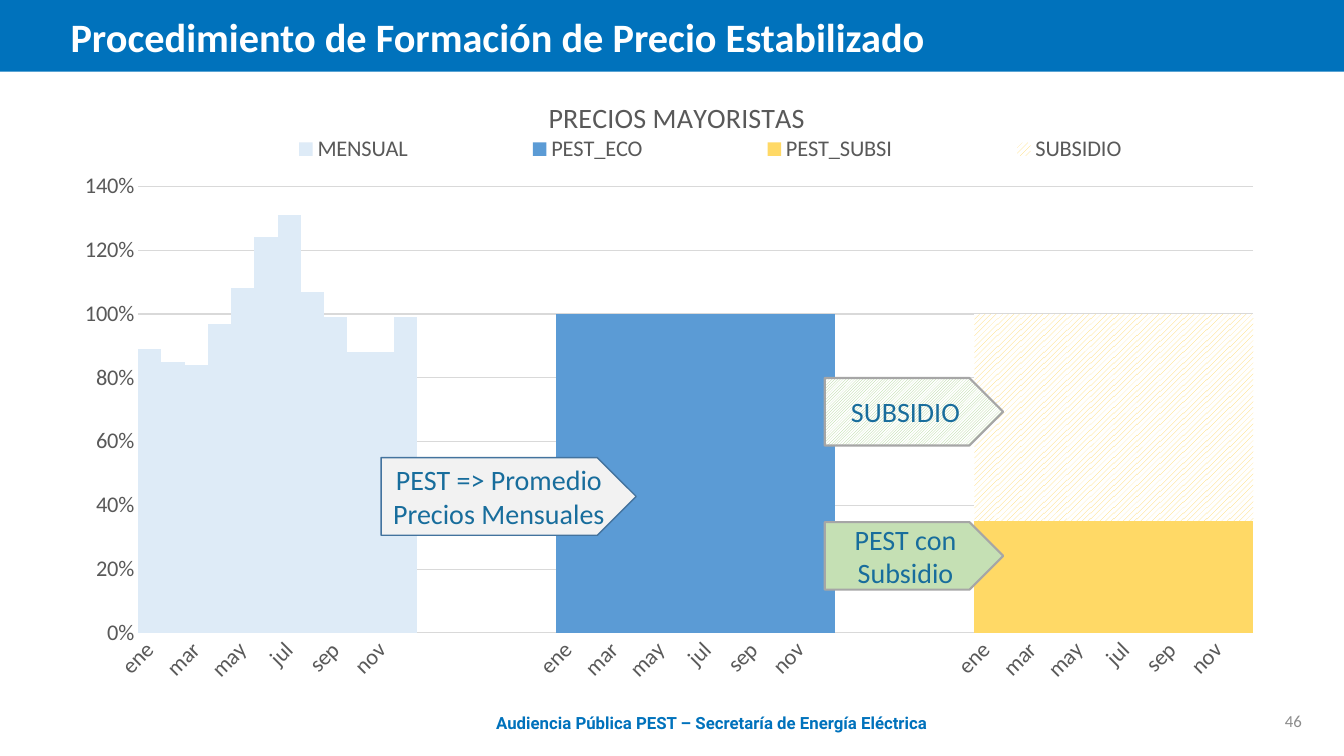
from dataclasses import dataclass

from lxml import etree
from pptx import Presentation
from pptx import util as u
from pptx.chart.data import CategoryChartData
from pptx.dml.color import RGBColor
from pptx.enum import chart as ch, dml, shapes, text
from pptx.oxml import ns


@dataclass(frozen=True)
class Theme:
    blue: str = "0072BC"
    white: str = "FFFFFF"
    number: str = "8C8C8C"
    label: str = "595959"
    grid: str = "D9D9D9"
    arrow_text: str = "186D9C"
    arrow_grey: str = "A6A6A6"
    arrow_blue: str = "43739E"
    pale_grey: str = "F2F2F2"
    pale_green: str = "C5E0B4"
    green: str = "A9D18E"
    pale_blue: str = "DEEBF7"
    mid_blue: str = "5B9BD5"
    yellow: str = "FFD966"
    black: str = "000000"
    font: str = "Calibri"
    footer_font: str = "Roboto"
    title_size: float = 28.8
    large: int = 20
    axis: int = 16
    small: int = 12
    chart: int = 10


T = Theme()
MONTHS = ["ene", "feb", "mar", "abr", "may", "jun",
          "jul", "ago", "sep", "oct", "nov", "dic"]
GAP = 6
MONTHLY = [0.89, 0.85, 0.84, 0.97, 1.08, 1.24, 1.31, 1.07, 0.99, 0.88, 0.88, 0.99]
SERIES = [
    ("MENSUAL", 0, MONTHLY, T.pale_blue, None),
    ("PEST_ECO", 1, [1] * 12, T.mid_blue, None),
    ("PEST_SUBSI", 2, [0.35] * 12, T.yellow, None),
    ("SUBSIDIO", 2, [0.65] * 12, T.yellow, dml.MSO_PATTERN.WIDE_UPWARD_DIAGONAL),
]


def rgb(value):
    return RGBColor.from_string(value)


def inches(box):
    return [u.Inches(v) for v in box]


def style(font, size, color, name=T.font, bold=False):
    values = {"size": u.Pt(size), "name": name, "bold": bold}
    for key, value in values.items():
        setattr(font, key, value)
    font.color.rgb = rgb(color)


def paint(fill, color, pattern=None):
    if pattern is None:
        fill.solid()
        fill.fore_color.rgb = rgb(color)
    else:
        fill.patterned()
        fill.pattern = pattern
        fill.fore_color.rgb = rgb(color)
        fill.back_color.rgb = rgb(T.white)


def write(sp, words, align, **look):
    tf = sp.text_frame
    tf.word_wrap = True
    tf.vertical_anchor = text.MSO_ANCHOR.MIDDLE
    p = tf.paragraphs[0]
    p.alignment = align
    r = p.add_run()
    r.text = words
    style(r.font, **look)
    return p


def add_header(s, box, words):
    left, top, width, height = box
    band = s.shapes.add_shape(shapes.MSO_SHAPE.RECTANGLE, *inches(box))
    band.shadow.inherit = False
    paint(band.fill, T.blue)
    band.line.fill.background()
    s.shapes._spTree.insert(2, band._element)
    title = s.shapes.title
    place = inches((left + 0.6, top + 0.1, 10.08, height - 0.13))
    for key, value in zip(("left", "top", "width", "height"), place):
        setattr(title, key, value)
    p = write(title, words, text.PP_ALIGN.LEFT, size=T.title_size,
              color=T.white, bold=True)
    p.line_spacing = 0.9


def add_label(s, box, words, align, **look):
    write(s.shapes.add_textbox(*inches(box)), words, align, size=T.small, **look)


def set_layout(parent, index, chart_box, place, inner=False):
    for old in parent.findall(ns.qn("c:layout")):
        parent.remove(old)
    layout = etree.Element(ns.qn("c:layout"))
    manual = etree.SubElement(layout, ns.qn("c:manualLayout"))
    values = {"layoutTarget": "inner"} if inner else {}
    values.update({"xMode": "edge", "yMode": "edge"})
    width, height = chart_box[2:]
    for key, length, total in zip("xywh", place, (width, height) * 2):
        values[key] = length / total
    for key, value in values.items():
        etree.SubElement(manual, ns.qn(f"c:{key}")).set("val", str(value))
    parent.insert(index, layout)


def format_axes(chart):
    cat, val = chart.category_axis, chart.value_axis
    for axis in (cat, val):
        axis.major_tick_mark = axis.minor_tick_mark = ch.XL_TICK_MARK.NONE
        style(axis.tick_labels.font, T.axis, T.label)
    values = {"minimum_scale": 0, "maximum_scale": 1.4, "major_unit": 0.2,
              "has_major_gridlines": True}
    for key, value in values.items():
        setattr(val, key, value)
    val.tick_labels.number_format = "0%"
    val.tick_labels.number_format_is_linked = False
    val.format.line.fill.background()
    for line in (cat.format.line, val.major_gridlines.format.line):
        line.color.rgb = rgb(T.grid)
        line.width = u.Pt(0.75)
    cat._element.txPr.find(ns.qn("a:bodyPr")).set("rot", "-2700000")
    skip = etree.Element(ns.qn("c:tickLblSkip"))
    skip.set("val", "2")
    cat._element.find(ns.qn("c:noMultiLvlLbl")).addprevious(skip)


def add_price_chart(s, box):
    data = CategoryChartData(number_format="0%")
    data.categories = (MONTHS + [""] * GAP) * 2 + MONTHS
    step = len(MONTHS) + GAP
    for name, block, values, _, _ in SERIES:
        before = [None] * (block * step)
        data.add_series(name, before + values + [None] * ((2 - block) * step))
    frame = s.shapes.add_chart(ch.XL_CHART_TYPE.COLUMN_STACKED, *inches(box), data)
    chart = frame.chart
    style(chart.font, T.chart, T.black)
    plot = chart.plots[0]
    plot.gap_width, plot.overlap, plot.vary_by_categories = 0, 100, False
    for series, (_, _, _, color, pattern) in zip(plot.series, SERIES):
        paint(series.format.fill, color, pattern)
        series.format.line.fill.background()
        series.invert_if_negative = False
    format_axes(chart)
    chart.has_title = True
    r = chart.chart_title.text_frame.paragraphs[0].add_run()
    r.text = "PRECIOS MAYORISTAS"
    style(r.font, T.large, T.label)
    chart.has_legend = True
    chart.legend.position = ch.XL_LEGEND_POSITION.TOP
    chart.legend.include_in_layout = True
    style(chart.legend.font, T.axis, T.label)
    set_layout(chart.chart_title._element, 1, box, (4.79, 0))
    set_layout(chart.legend._element, 1, box, (1.2, 0.41, 10.49, 0.3))
    set_layout(chart._chartSpace.chart.plotArea, 0, box,
               (0.77, 0.93, 11.06, 4.43), inner=True)


def add_arrow(s, box, words, fill, line, width, pattern=None):
    sp = s.shapes.add_shape(shapes.MSO_SHAPE.PENTAGON, *inches(box))
    sp.shadow.inherit = False
    paint(sp.fill, fill, pattern)
    sp.line.color.rgb = rgb(line)
    sp.line.width = u.Pt(width)
    write(sp, words, text.PP_ALIGN.CENTER, size=T.large, color=T.arrow_text)


def main():
    prs = Presentation()
    prs.slide_width, prs.slide_height = inches((13.33, 7.5))
    s = prs.slides.add_slide(prs.slide_layouts[5])
    add_header(s, (0, 0, 13.33, 0.71),
               "Procedimiento de Formación de Precio Estabilizado")
    add_label(s, (10.01, 6.95, 3, 0.4), "46", text.PP_ALIGN.RIGHT, color=T.number)
    add_label(s, (3.44, 6.9, 7.24, 0.55),
              "Audiencia Pública PEST – Secretaría de Energía Eléctrica",
              text.PP_ALIGN.CENTER, color=T.blue, name=T.footer_font, bold=True)
    add_price_chart(s, (0.6, 0.92, 12.07, 5.99))
    add_arrow(s, (3.78, 4.54, 2.53, 0.77), "PEST => Promedio Precios Mensuales",
              T.pale_grey, T.arrow_blue, 1)
    add_arrow(s, (8.18, 5.18, 1.77, 0.67), "PEST con Subsidio",
              T.pale_green, T.arrow_grey, 1.5)
    add_arrow(s, (8.18, 3.75, 1.77, 0.67), "SUBSIDIO", T.green, T.arrow_grey, 1.5,
              dml.MSO_PATTERN.DARK_UPWARD_DIAGONAL)
    prs.save("out.pptx")


if __name__ == "__main__":
    main()
